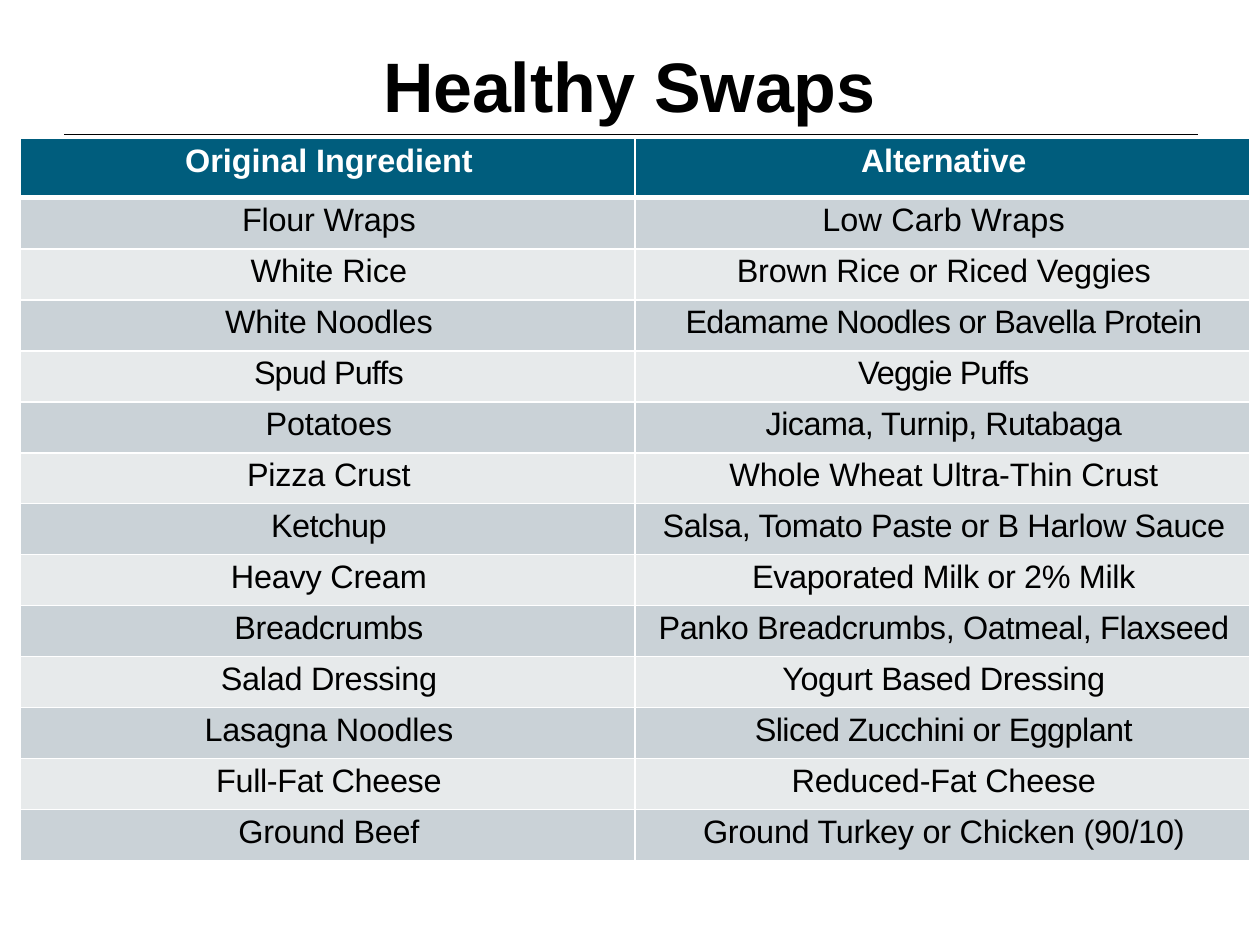
from typing import NamedTuple

from lxml.etree import SubElement
from pptx import Presentation
from pptx.dml.color import RGBColor
from pptx.enum.shapes import MSO_CONNECTOR
from pptx.enum.text import MSO_ANCHOR, MSO_AUTO_SIZE, PP_ALIGN
from pptx.oxml.ns import qn
from pptx.util import Inches, Pt

BLACK, WHITE = "000000", "FFFFFF"
TEAL, DARK, LIGHT = "005D7D", "CAD2D7", "E7EAEB"
HEAD_H, ROW_H, COL_W = 0.47, 0.405, 4.88


class Entry(NamedTuple):
    text: str
    track: float = 0  # letter spacing in points


class Swap(NamedTuple):
    old: Entry
    new: Entry


HEADS = Swap(Entry("Original Ingredient"), Entry("Alternative", -0.1))
SWAPS = [
    Swap(Entry("Flour Wraps", -0.1), Entry("Low Carb Wraps", 0.1)),
    Swap(Entry("White Rice"), Entry("Brown Rice or Riced Veggies", -0.1)),
    Swap(Entry("White Noodles", -0.15),
         Entry("Edamame Noodles or Bavella Protein", -0.4)),
    Swap(Entry("Spud Puffs", -0.5), Entry("Veggie Puffs", -0.5)),
    Swap(Entry("Potatoes", -0.1), Entry("Jicama, Turnip, Rutabaga", -0.3)),
    Swap(Entry("Pizza Crust", -0.1), Entry("Whole Wheat Ultra-Thin Crust", -0.05)),
    Swap(Entry("Ketchup", -0.3),
         Entry("Salsa, Tomato Paste or B Harlow Sauce", -0.2)),
    Swap(Entry("Heavy Cream", -0.1), Entry("Evaporated Milk or 2% Milk", -0.2)),
    Swap(Entry("Breadcrumbs", -0.2),
         Entry("Panko Breadcrumbs, Oatmeal, Flaxseed", -0.2)),
    Swap(Entry("Salad Dressing", -0.15), Entry("Yogurt Based Dressing", -0.2)),
    Swap(Entry("Lasagna Noodles", -0.15),
         Entry("Sliced Zucchini or Eggplant", -0.3)),
    Swap(Entry("Full-Fat Cheese", -0.2), Entry("Reduced-Fat Cheese", -0.1)),
    Swap(Entry("Ground Beef", -0.15),
         Entry("Ground Turkey or Chicken (90/10)", -0.15)),
]


def color(code: str) -> RGBColor:
    return RGBColor.from_string(code)


def write(frame, text: str, *, size: float, tint: str = BLACK,
          bold: bool = False, align=PP_ALIGN.CENTER, track: float = 0) -> None:
    para = frame.paragraphs[0]
    para.alignment = align
    run = para.add_run()
    run.text = text
    font = run.font
    font.name, font.size, font.bold = "Arial", Pt(size), bold
    font.color.rgb = color(tint)
    if track:
        run._r.get_or_add_rPr().set("spc", str(round(track * 100)))


def edge(cell, top: float, base: float) -> None:
    """Give a cell white borders; top and base are widths in points."""
    props = cell._tc.get_or_add_tcPr()
    sides = {"lnL": 1, "lnR": 1, "lnT": top, "lnB": base}
    for spot, (tag, width) in enumerate(sides.items()):
        line = SubElement(props, qn(f"a:{tag}"), w=str(Pt(width)))
        fill = SubElement(line, qn("a:solidFill"))
        SubElement(fill, qn("a:srgbClr"), val=WHITE)
        props.insert(spot, line)


def add_title(slide, text: str) -> None:
    title = slide.shapes.title
    title.left, title.top = Inches(3.03), Inches(0.33)
    title.width, title.height = Inches(3.95), Inches(0.7)
    frame = title.text_frame
    frame.auto_size = MSO_AUTO_SIZE.NONE
    frame.word_wrap = True
    frame.vertical_anchor = MSO_ANCHOR.TOP
    frame.margin_right = frame.margin_bottom = 0
    frame.margin_left = frame.margin_top = Inches(0.01)
    write(frame, text, size=40, bold=True, align=PP_ALIGN.LEFT, track=-0.05)


def add_rule(slide) -> None:
    y = Inches(1.07)
    rule = slide.shapes.add_connector(
        MSO_CONNECTOR.STRAIGHT, Inches(0.51), y, Inches(9.51), y)
    rule.line.color.rgb = color(BLACK)
    rule.line.width = Pt(0.8)
    SubElement(rule._element.spPr, qn("a:effectLst"))


def add_swaps(slide) -> None:
    rows = [HEADS, *SWAPS]
    high = HEAD_H + ROW_H * len(SWAPS)
    table = slide.shapes.add_table(
        len(rows), 2, Inches(0.16), Inches(1.1),
        Inches(2 * COL_W), Inches(high)).table
    for col in table.columns:
        col.width = Inches(COL_W)
    for r, swap in enumerate(rows):
        head = r == 0
        table.rows[r].height = Inches(HEAD_H if head else ROW_H)
        for c, entry in enumerate(swap):
            cell = table.cell(r, c)
            cell.margin_left = Inches(0.02)
            cell.margin_right = cell.margin_bottom = 0
            cell.margin_top = Inches(0.04)
            cell.fill.solid()
            cell.fill.fore_color.rgb = color(
                TEAL if head else DARK if r % 2 else LIGHT)
            edge(cell, top=3 if r == 1 else 1, base=3 if head else 1)
            write(cell.text_frame, entry.text, size=18.5, bold=head,
                  tint=WHITE if head else BLACK, track=entry.track)


def main() -> None:
    deck = Presentation()
    deck.slide_width, deck.slide_height = Inches(10), Inches(7.5)
    slide = deck.slides.add_slide(deck.slide_layouts[5])
    add_rule(slide)
    add_title(slide, "Healthy Swaps")
    add_swaps(slide)
    deck.save("out.pptx")


if __name__ == "__main__":
    main()
